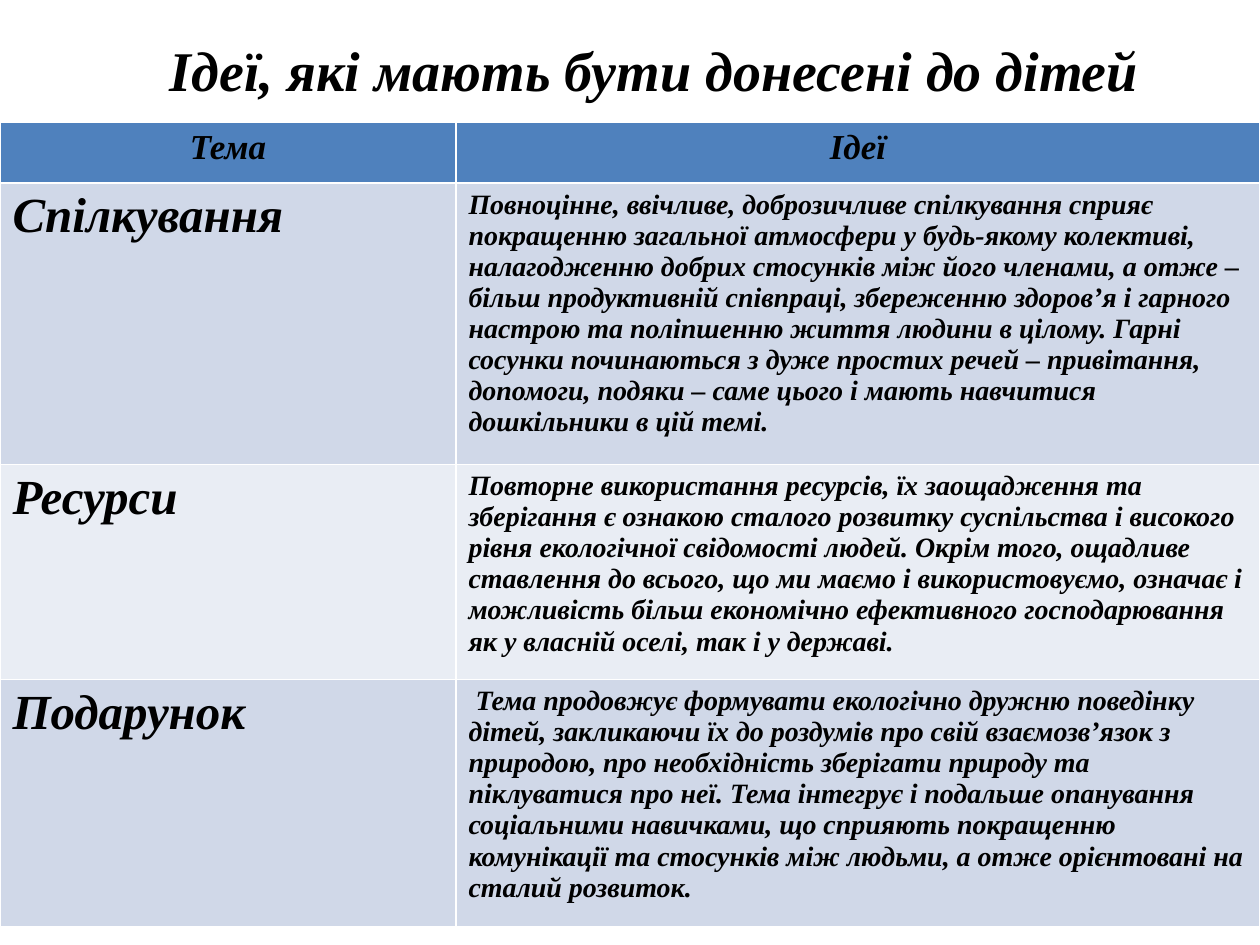
"""Build a slide with a table of themes and the ideas to convey to children."""
from pptx import Presentation
from pptx import util as u
from pptx.dml.color import RGBColor
from pptx.enum import text

TITLE = "Ідеї, які мають бути донесені до дітей"
HEADER = ("Тема", "Ідеї")
THEMES = [
    ("Спілкування",
     "Повноцінне, ввічливе, доброзичливе спілкування сприяє покращенню загальної "
     "атмосфери у будь-якому колективі, налагодженню добрих стосунків між його "
     "членами, а отже – більш продуктивній співпраці, збереженню здоров’я і гарного "
     "настрою та поліпшенню життя людини в цілому. Гарні сосунки починаються з дуже "
     "простих речей – привітання, допомоги, подяки – саме цього і мають навчитися "
     "дошкільники в цій темі."),
    ("Ресурси",
     "Повторне використання ресурсів, їх заощадження та зберігання є ознакою сталого "
     "розвитку суспільства і високого рівня екологічної свідомості людей. Окрім того, "
     "ощадливе ставлення до всього, що ми маємо і використовуємо, означає і можливість "
     "більш економічно ефективного господарювання як у власній оселі, так і у державі."),
    ("Подарунок",
     " Тема продовжує формувати екологічно дружню поведінку дітей, закликаючи їх до "
     "роздумів про свій взаємозв’язок з природою, про необхідність зберігати природу та "
     "піклуватися про неї. Тема інтегрує і подальше опанування соціальними навичками, "
     "що сприяють покращенню комунікації та стосунків між людьми, а отже орієнтовані "
     "на сталий розвиток."),
]
COLORS = {"text": "000000", "header": "4F81BD", "odd": "D0D8E8", "even": "E9EDF4"}
FONT = "Times New Roman"
SLIDE = (1260, 945)
TITLE_BOX = (157, 29, 1004, 81)
TABLE_TOP = 122
COLUMNS = (456, 804)
ROWS = (61, 281, 215, 247)
HEADER_SIZES = (20, 20)
BODY_SIZES = (28, 16)


def px(n):
    return u.Emu(n * 914400 // 126)


def write(tf, words, size, align):
    p = tf.paragraphs[0]
    p.alignment = align
    r = p.add_run()
    r.text = words
    r.font.name, r.font.size = FONT, u.Pt(size)
    r.font.bold = r.font.italic = True
    r.font.color.rgb = RGBColor.from_string(COLORS["text"])


def add_title(s):
    sp = s.shapes.title
    sp.left, sp.top, sp.width, sp.height = map(px, TITLE_BOX)
    tf = sp.text_frame
    tf.word_wrap = False
    tf.auto_size = text.MSO_AUTO_SIZE.SHAPE_TO_FIT_TEXT
    tf.vertical_anchor = text.MSO_ANCHOR.TOP
    write(tf, TITLE, 32, text.PP_ALIGN.LEFT)


def add_themes(s):
    table = s.shapes.add_table(len(ROWS), len(COLUMNS), 0, px(TABLE_TOP),
                               px(sum(COLUMNS)), px(sum(ROWS))).table
    for column, width in zip(table.columns, COLUMNS):
        column.width = px(width)
    for i, (row, height, words) in enumerate(zip(table.rows, ROWS, [HEADER] + THEMES)):
        row.height = px(height)
        fill = "header" if i == 0 else "odd" if i % 2 else "even"
        sizes = BODY_SIZES if i else HEADER_SIZES
        align = text.PP_ALIGN.LEFT if i else text.PP_ALIGN.CENTER
        for cell, word, size in zip(row.cells, words, sizes):
            cell.fill.solid()
            cell.fill.fore_color.rgb = RGBColor.from_string(COLORS[fill])
            write(cell.text_frame, word, size, align)


def main():
    prs = Presentation()
    prs.slide_width, prs.slide_height = map(px, SLIDE)
    s = prs.slides.add_slide(prs.slide_layouts[5])
    add_title(s)
    add_themes(s)
    prs.save("out.pptx")


if __name__ == "__main__":
    main()
